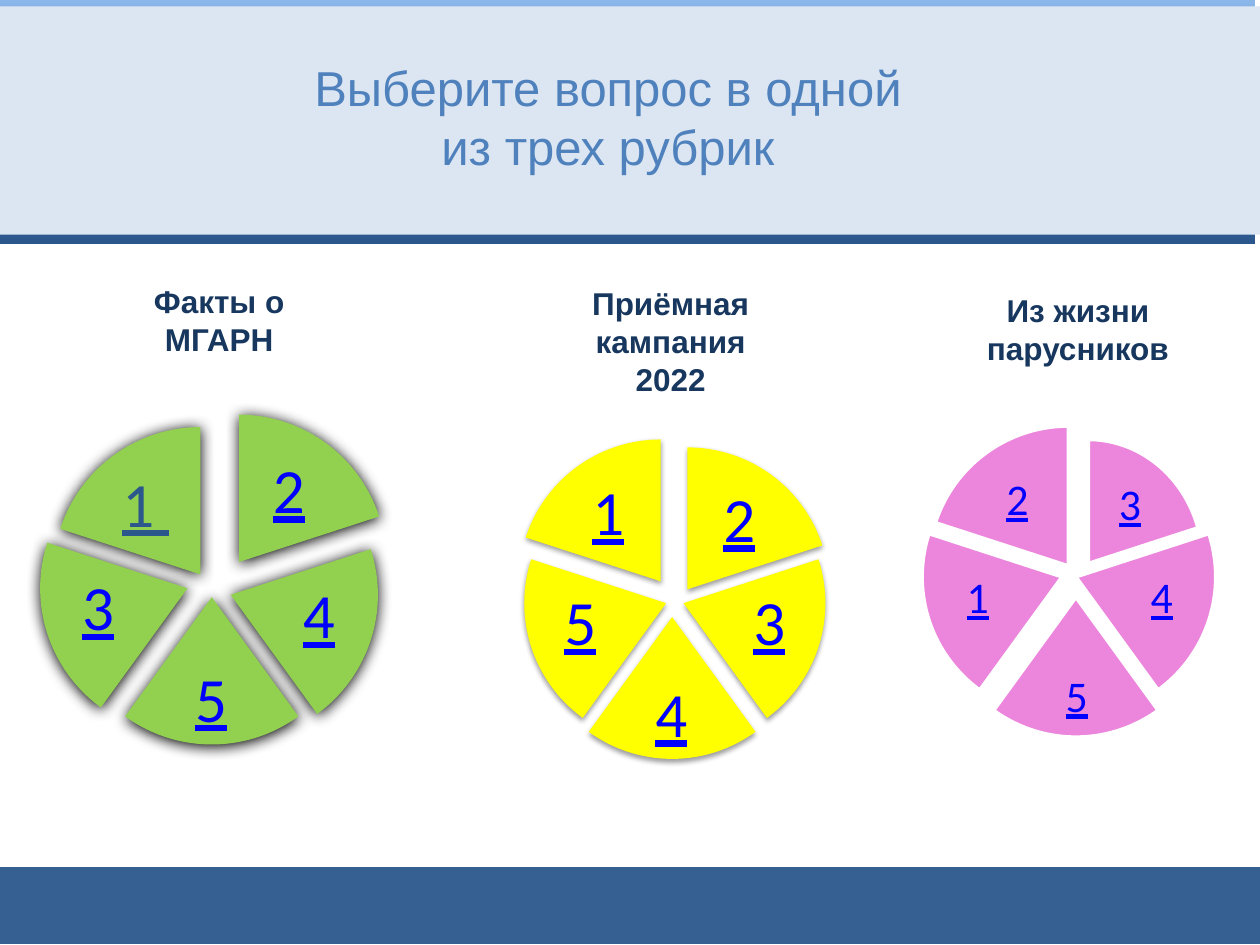
from lxml.etree import SubElement
from pptx import Presentation
from pptx.dml.color import RGBColor
from pptx.enum.shapes import MSO_SHAPE as Kind
from pptx.enum.text import MSO_ANCHOR as Anchor, MSO_AUTO_SIZE as Fit, PP_ALIGN as Align
from pptx.oxml.ns import qn
from pptx.util import Cm, Pt

NAVY = RGBColor(0x37, 0x60, 0x92)
DARK = RGBColor(0x2B, 0x57, 0x8D)
LIGHT = RGBColor(0x8B, 0xB6, 0xE9)
PALE = RGBColor(0xDC, 0xE6, 0xF2)
STEEL = RGBColor(0x4F, 0x81, 0xBD)
INK = RGBColor(0x17, 0x37, 0x5E)
BLUE = RGBColor(0x00, 0x00, 0xFF)
WHITE = RGBColor(0xFF, 0xFF, 0xFF)
GREEN = RGBColor(0x92, 0xD0, 0x50)
YELLOW = RGBColor(0xFF, 0xFF, 0x00)
PINK = RGBColor(0xEC, 0x86, 0xDD)

FOOT = (-0.08, 17.48, 25.5, 1.55)
BAND = (0, -0.03, 25.3, 4.95)
PANEL = (-0.08, 0.13, 25.5, 4.6)

HEADS = [
    ("Выберите вопрос в одной из трех рубрик", (5.51, 1.04, 13.49, 2.64), 28, STEEL, False),
    ("Факты о МГАРН", (1.7, 5.56, 5.44, 1.8), 18, INK, True),
    ("Приёмная кампания 2022", (11.07, 5.61, 4.9, 2.57), 18, INK, True),
    ("Из жизни парусников", (19.56, 5.74, 4.34, 1.8), 18, INK, True),
]

WHEELS = [
    {"fill": GREEN, "shade": (100, 8.5, 1), "size": 36, "pad": 0.13, "pie": (5.94, 5.94),
     "boxes": [(2.01, 1.37), (1.78, 1.5), (2.11, 1.27)],
     "parts": [
         ([("2", 36, BLUE, True), (" ", 20, DARK, False)], (1.85, 8.36), (4.9, 9.25)),
         ("4", (1.68, 9.02), (5.54, 11.71)),
         ("5", (1.3, 9.07), (3.2, 13.51)),
         ("3", (0.81, 8.89), (1.09, 11.56)),
         ([("1 ", 36, DARK, True)], (1.07, 8.61), (1.93, 9.53))]},
    {"fill": YELLOW, "shade": (38, 3.1, 1.6), "size": 36, "pad": 0.13, "pie": (5.72, 5.72),
     "boxes": [(1.93, 1.32), (1.7, 1.42), (2.03, 1.22)],
     "parts": [
         ("2", (11, 9.02), (13.94, 9.86)),
         ("3", (10.92, 9.3), (14.66, 11.89)),
         ("4", (10.69, 9.58), (12.52, 13.84)),
         ("5", (10.57, 9.3), (10.85, 11.89)),
         ("1", (10.46, 8.86), (11.3, 9.73))]},
    {"fill": PINK, "shade": None, "size": 25, "pad": 0.08, "pie": (5.64, 5.64),
     "first": (4.62, 5),
     "boxes": [(1.9, 1.32), (1.68, 1.42), (2.01, 1.22)],
     "parts": [
         ("3", (19.63, 8.86), (21.83, 9.55)),
         ("4", (18.87, 8.81), (22.58, 11.38)),
         ("5", (18.87, 9.22), (20.7, 13.46)),
         ("1", (18.59, 8.81), (18.87, 11.38)),
         ("2", (18.72, 8.59), (19.56, 9.45))]},
]

START, STEP, TURN = 162, 43.2, 216


def add_form(shapes, kind, box, color=None):
    form = shapes.add_shape(kind, *map(Cm, box))
    form.shadow.inherit = False
    form.line.fill.background()
    if color is not None:
        form.fill.solid()
        form.fill.fore_color.rgb = color
    return form


def add_text(shapes, box, runs, face, bold=False):
    area = shapes.add_textbox(*map(Cm, box))
    frame = area.text_frame
    frame.word_wrap = True
    para = frame.paragraphs[0]
    para.alignment = Align.CENTER
    for text, size, color, under in runs:
        run = para.add_run()
        run.text = text
        font = run.font
        font.name, font.size, font.bold = face, Pt(size), bold
        font.underline = under
        font.color.rgb = color
    return frame


def add_shade(form, alpha, blur, dist):
    effect = form._element.spPr.find(qn("a:effectLst"))
    outer = SubElement(effect, qn("a:outerShdw"), blurRad=str(Pt(blur)),
                       dist=str(Pt(dist)), dir="5400000", rotWithShape="0")
    color = SubElement(outer, qn("a:srgbClr"), val="000000")
    SubElement(color, qn("a:alpha"), val=str(alpha * 1000))


def add_wheel(slide, wheel):
    shapes = slide.shapes.add_group_shape().shapes
    for i, (label, spot, place) in enumerate(wheel["parts"]):
        size = wheel.get("first", wheel["pie"]) if i == 0 else wheel["pie"]
        wedge = add_form(shapes, Kind.PIE, spot + size, wheel["fill"])
        wedge.adjustments[0] = (START + i * STEP) % TURN
        wedge.adjustments[1] = (START + (i + 1) * STEP) % TURN
        if wheel["shade"]:
            add_shade(wedge, *wheel["shade"])
        else:
            wedge.line.color.rgb = WHITE
            wedge.line.width = Pt(2)
        runs = [(label, wheel["size"], BLUE, True)] if isinstance(label, str) else label
        box = place + wheel["boxes"][min(i, 4 - i)]
        frame = add_text(shapes, box, runs, "Calibri")
        frame.vertical_anchor = Anchor.MIDDLE
        frame.margin_left = frame.margin_right = Cm(wheel["pad"])
        frame.margin_top = frame.margin_bottom = Cm(wheel["pad"])
        frame.paragraphs[0].line_spacing = 0.9


def main():
    deck = Presentation()
    deck.slide_width, deck.slide_height = Cm(25.4), Cm(19.05)
    slide = deck.slides.add_slide(deck.slide_layouts[6])
    shapes = slide.shapes
    add_form(shapes, Kind.RECTANGLE, FOOT, NAVY)
    band = add_form(shapes, Kind.RECTANGLE, BAND)
    band.fill.gradient()
    band.fill.gradient_angle = 90
    for stop, color in zip(band.fill.gradient_stops, (DARK, LIGHT)):
        stop.color.rgb = color
    add_form(shapes, Kind.RECTANGLE, PANEL, PALE)
    for wheel in WHEELS:
        add_wheel(slide, wheel)
    for text, box, size, color, bold in HEADS:
        frame = add_text(shapes, box, [(text, size, color, False)], "Arial", bold)
        frame.auto_size = Fit.SHAPE_TO_FIT_TEXT
    deck.save("out.pptx")


if __name__ == "__main__":
    main()
